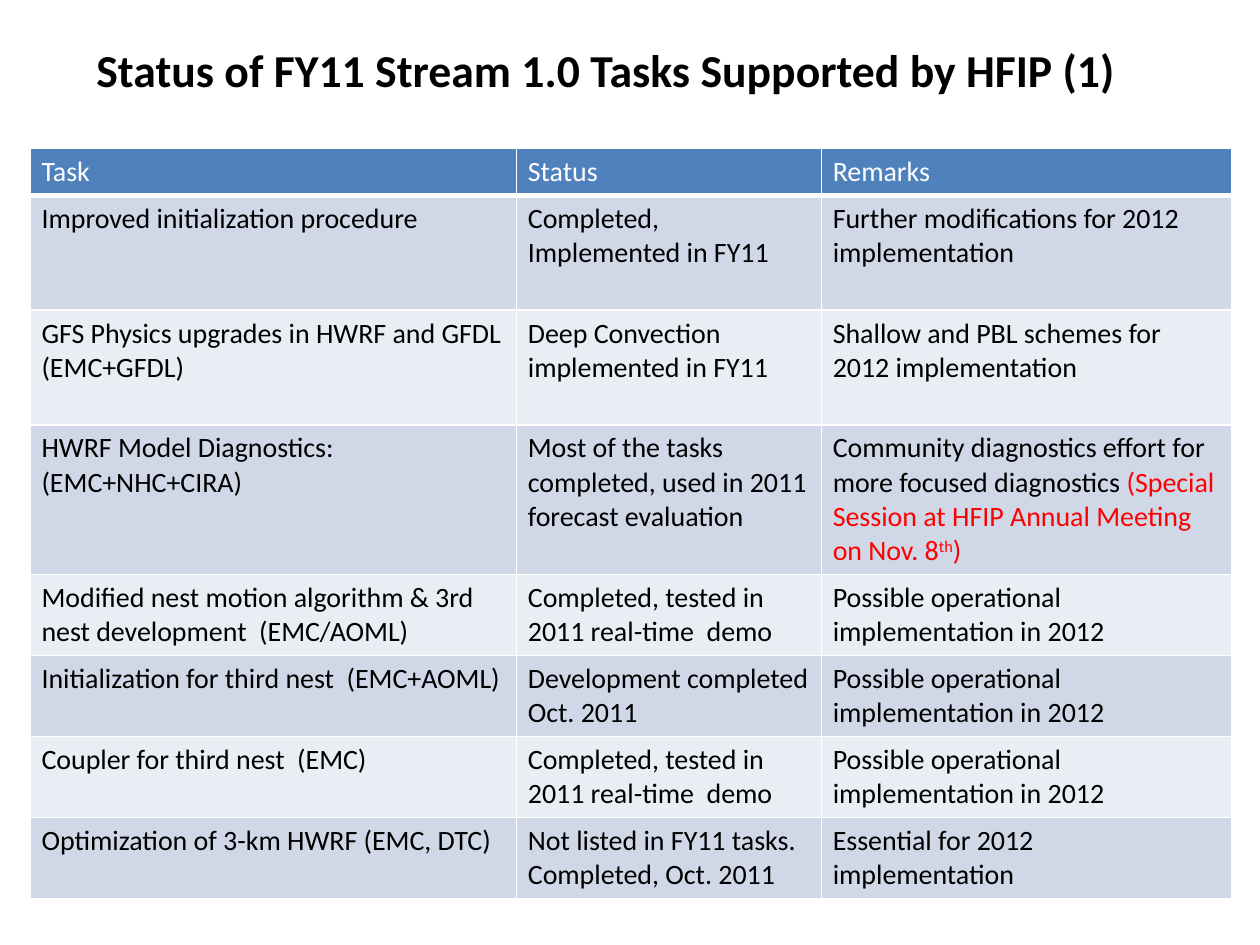
from lxml.etree import SubElement
from pptx import Presentation
from pptx.dml.color import RGBColor
from pptx.enum.text import MSO_ANCHOR, PP_ALIGN
from pptx.oxml.ns import qn
from pptx.util import Inches, Pt

BLACK = RGBColor(0x00, 0x00, 0x00)
WHITE = RGBColor(0xFF, 0xFF, 0xFF)
RED = RGBColor(0xFF, 0x00, 0x00)
HEADER_BLUE = RGBColor(0x4F, 0x81, 0xBD)
BANDS = (RGBColor(0xD0, 0xD8, 0xE8), RGBColor(0xE9, 0xED, 0xF4))
FONT = "Calibri"

TITLE = "Status of FY11 Stream 1.0 Tasks Supported by HFIP (1)"
COLUMN_WIDTHS = (3.86, 2.42, 3.26)
ROW_HEIGHTS = (0.37, 0.91, 0.91, 1.18, 0.63, 0.63, 0.63, 0.63)
TESTED = "Completed, tested in 2011 real-time  demo"
POSSIBLE = "Possible operational implementation in 2012"
ROWS = (
    ("Task", "Status", "Remarks"),
    ("Improved initialization procedure", "Completed, Implemented in FY11",
     "Further modifications for 2012 implementation"),
    ("GFS Physics upgrades in HWRF and GFDL (EMC+GFDL)",
     "Deep Convection implemented in FY11",
     "Shallow and PBL schemes for 2012 implementation"),
    ("HWRF Model Diagnostics: (EMC+NHC+CIRA)",
     "Most of the tasks completed, used in 2011 forecast evaluation",
     "Community diagnostics effort for more focused diagnostics "),
    ("Modified nest motion algorithm & 3rd nest development  (EMC/AOML)",
     TESTED, POSSIBLE),
    ("Initialization for third nest  (EMC+AOML)",
     "Development completed Oct. 2011", POSSIBLE),
    ("Coupler for third nest  (EMC)", TESTED, POSSIBLE),
    ("Optimization of 3-km HWRF (EMC, DTC)",
     "Not listed in FY11 tasks.  Completed, Oct. 2011",
     "Essential for 2012 implementation"),
)
DIAGNOSTICS_ROW, REMARKS_COLUMN = 3, 2


def style_font(font, size, color, bold=False):
    font.name = FONT
    font.size = Pt(size)
    font.bold = bold
    font.color.rgb = color


def add_title(page):
    title = page.shapes.title
    title.left, title.top = Inches(0.31), Inches(0.27)
    title.width, title.height = Inches(9), Inches(0.56)
    frame = title.text_frame
    frame.text = TITLE
    frame.word_wrap = True
    frame.vertical_anchor = MSO_ANCHOR.MIDDLE
    para = frame.paragraphs[0]
    para.alignment = PP_ALIGN.CENTER
    style_font(para.font, 26.1, BLACK, bold=True)


def set_borders(cell, widths):
    properties = cell._tc.get_or_add_tcPr()
    for side, width in zip("LRTB", widths):
        line = SubElement(properties, qn(f"a:ln{side}"), w=str(Pt(width)))
        fill = SubElement(line, qn("a:solidFill"))
        SubElement(fill, qn("a:srgbClr"), val=str(WHITE))


def fill_cell(cell, text, text_color, fill_color, widths):
    set_borders(cell, widths)
    cell.fill.solid()
    cell.fill.fore_color.rgb = fill_color
    cell.margin_left = cell.margin_right = Inches(0.09)
    cell.margin_top = cell.margin_bottom = Inches(0.05)
    cell.text = text
    style_font(cell.text_frame.paragraphs[0].font, 16, text_color)


def add_session_note(para):
    pieces = (("(Special Session at HFIP Annual Meeting on Nov. 8", 0),
              ("th", 30000), (")", 0))
    for text, baseline in pieces:
        span = para.add_run()
        span.text = text
        span.font.color.rgb = RED
        if baseline:
            span._r.get_or_add_rPr().set("baseline", str(baseline))


def add_task_table(page):
    frame = page.shapes.add_table(
        len(ROWS), len(COLUMN_WIDTHS), Inches(0.24), Inches(1.18),
        Inches(sum(COLUMN_WIDTHS)), Inches(sum(ROW_HEIGHTS)))
    table = frame.table
    for column, width in zip(table.columns, COLUMN_WIDTHS):
        column.width = Inches(width)
    for index, (height, texts) in enumerate(zip(ROW_HEIGHTS, ROWS)):
        table.rows[index].height = Inches(height)
        header = index == 0
        text_color = WHITE if header else BLACK
        fill_color = HEADER_BLUE if header else BANDS[(index - 1) % 2]
        widths = (1, 1, 3 if index == 1 else 1, 3 if header else 1)
        for column, text in enumerate(texts):
            fill_cell(table.cell(index, column), text, text_color,
                      fill_color, widths)
    remarks = table.cell(DIAGNOSTICS_ROW, REMARKS_COLUMN)
    add_session_note(remarks.text_frame.paragraphs[0])


def main():
    deck = Presentation()
    deck.slide_width, deck.slide_height = Inches(10), Inches(7.5)
    page = deck.slides.add_slide(deck.slide_layouts[5])
    add_title(page)
    add_task_table(page)
    deck.save("out.pptx")


if __name__ == "__main__":
    main()
